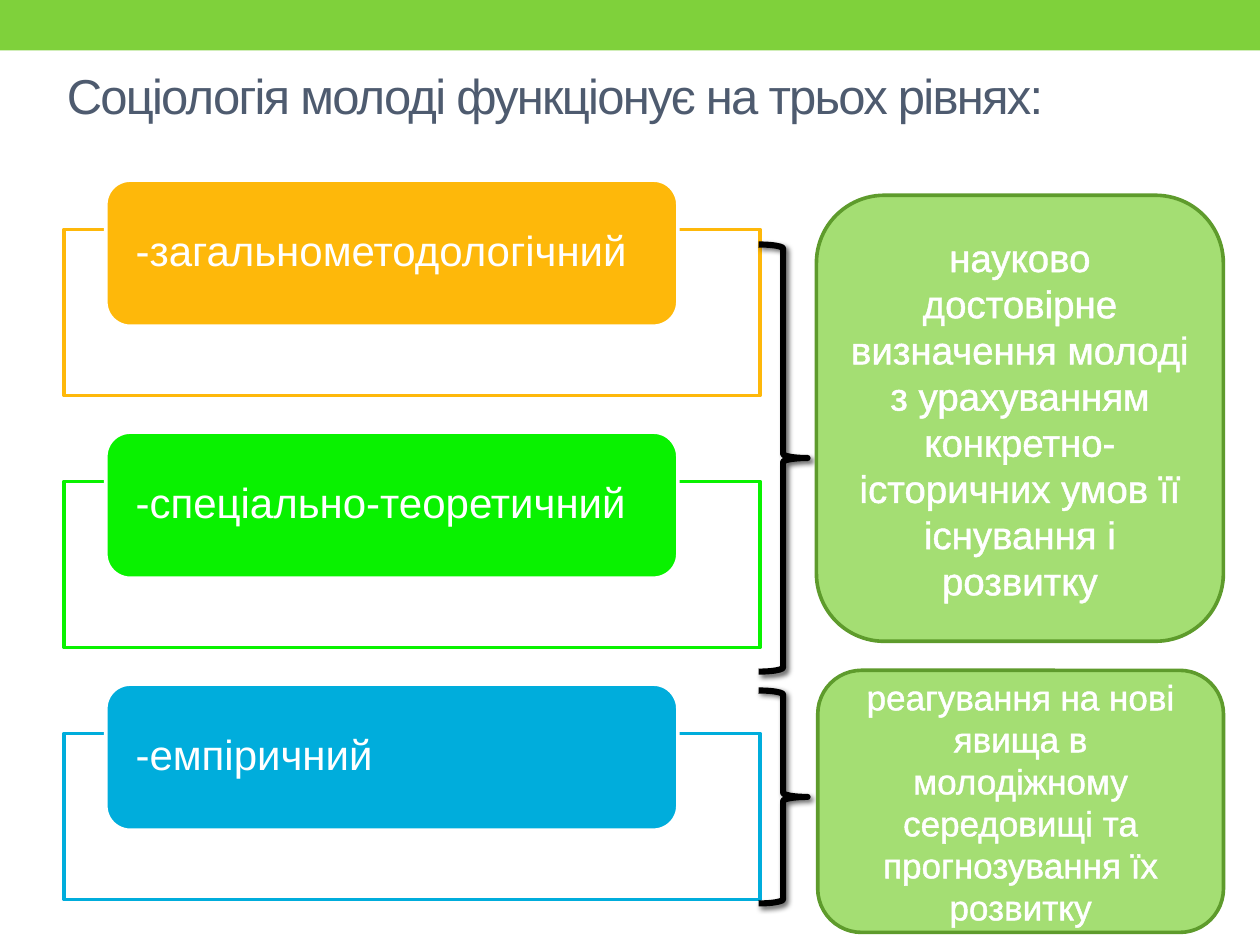
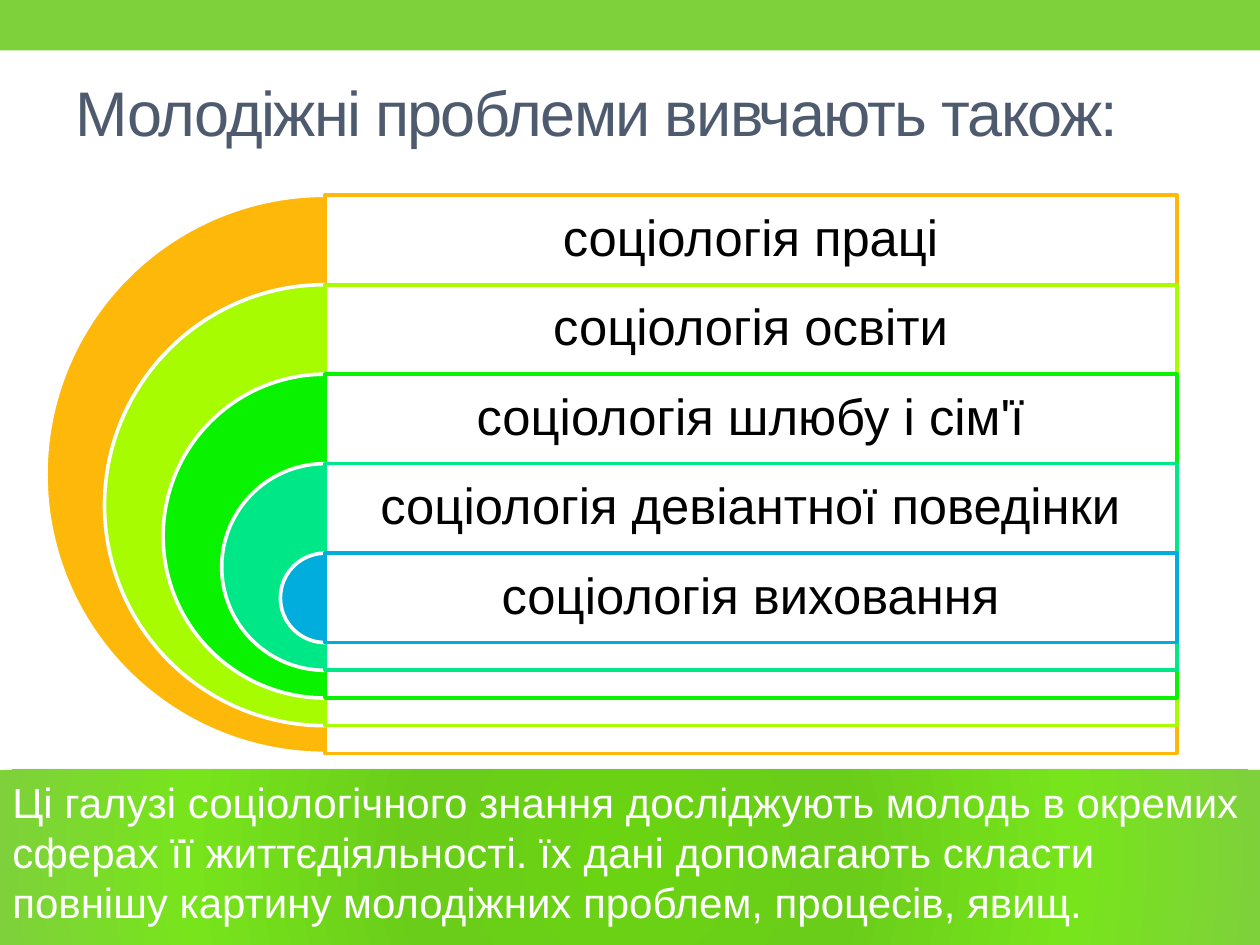
from dataclasses import dataclass

from lxml import etree
from pptx import Presentation
from pptx.dml.color import RGBColor
from pptx.enum.shapes import MSO_SHAPE as Preset
from pptx.enum.text import MSO_ANCHOR as Anchor, PP_ALIGN as Align
from pptx.oxml import parse_xml
from pptx.oxml.ns import nsdecls, qn
from pptx.util import Inches, Pt


@dataclass(frozen=True)
class Theme:
    font: str = "Arial"
    white: str = "FFFFFF"
    black: str = "000000"
    title: str = "4E5B6F"
    band: str = "7FD13B"
    callout_line: str = "5E9B2C"
    orange: str = "FEB80A"
    lime: str = "A7FC01"
    green: str = "09F200"
    mint: str = "00E788"
    blue: str = "00ADDC"
    footer_stops: tuple = ((0, "6AD312"), (34, "6ACD19"), (70, "77E41C"), (100, "7FD13B"))
    title_size: int = 36
    long_title_size: int = 28
    row_size: int = 29
    text_size: int = 24
    callout_size: int = 22
    small_callout_size: int = 20
    line: float = 2.08
    brace_line: float = 3.5


class Deck:
    def __init__(self, theme):
        self.theme = theme
        self.presentation = Presentation()
        self.presentation.slide_width = Inches(10)
        self.presentation.slide_height = Inches(7.5)
        self.slide = None

    def add_slide(self, title, box, size, anchor=Anchor.MIDDLE, top_inset=0.05):
        self.slide = self.presentation.slides.add_slide(self.presentation.slide_layouts[5])
        placeholder = self.slide.shapes.title
        placeholder.left, placeholder.top, placeholder.width, placeholder.height = map(Inches, box)
        paragraph = self.set_text(placeholder, title, size, self.theme.title, anchor=anchor)
        placeholder.text_frame.margin_top = Inches(top_inset)
        self.run_properties(paragraph).set("spc", "-100")

    def add_master_band(self):
        band = self.shape(Preset.RECTANGLE, (0, 0, 10, 0.4), self.theme.band)
        band.element.nvSpPr.cNvPr.set("id", "100")
        self.presentation.slide_master.shapes.element.insert(2, band.element)

    def shape(self, preset, box, fill=None, line=None, width=None, opacity=100):
        shape = self.slide.shapes.add_shape(preset, *map(Inches, box))
        shape.shadow.inherit = False
        if fill:
            shape.fill.solid()
            shape.fill.fore_color.rgb = RGBColor.from_string(fill)
            if opacity < 100:
                color = shape.element.spPr.find(qn("a:solidFill"))[0]
                etree.SubElement(color, qn("a:alpha"), val=str(opacity * 1000))
        else:
            shape.fill.background()
        if line:
            shape.line.color.rgb = RGBColor.from_string(line)
            shape.line.width = Pt(width or self.theme.line)
        else:
            shape.line.fill.background()
        return shape

    def set_text(self, shape, text, size, color, align=Align.LEFT, anchor=Anchor.MIDDLE, spacing=None):
        frame = shape.text_frame
        frame.word_wrap = True
        frame.vertical_anchor = anchor
        frame.text = text
        paragraph = frame.paragraphs[0]
        paragraph.alignment = align
        paragraph.line_spacing = spacing
        paragraph.font.name = self.theme.font
        paragraph.font.size = Pt(size)
        paragraph.font.color.rgb = RGBColor.from_string(color)
        return paragraph

    def run_properties(self, paragraph):
        return paragraph.runs[0].font._element

    def set_margins(self, shape, horizontal, vertical):
        frame = shape.text_frame
        frame.margin_left = frame.margin_right = Inches(horizontal)
        frame.margin_top = frame.margin_bottom = Inches(vertical)

    def cast_shadow(self, shape):
        effects = shape.element.spPr.find(qn("a:effectLst"))
        effects.append(parse_xml(
            f'<a:outerShdw {nsdecls("a")} blurRad="{Pt(3)}" dist="{Pt(2)}" dir="2700000" '
            f'algn="tl" rotWithShape="0"><a:srgbClr val="{self.theme.black}">'
            '<a:alpha val="60000"/></a:srgbClr></a:outerShdw>'))

    def framed_label(self, top, text, color):
        theme = self.theme
        self.shape(Preset.RECTANGLE, (0.51, top + 0.39, 5.52, 1.32), theme.white, color, opacity=90)
        label = self.shape(Preset.ROUNDED_RECTANGLE, (0.84, top, 4.54, 1.16), color, theme.white)
        self.set_text(label, text, theme.text_size, theme.white, spacing=0.9)
        self.set_margins(label, 0.18, 0)

    def brace(self, top, height):
        brace = self.shape(Preset.RIGHT_BRACE, (6.02, top, 0.39, height),
                           line=self.theme.black, width=self.theme.brace_line)
        self.cast_shadow(brace)

    def callout(self, box, text, size):
        theme = self.theme
        callout = self.shape(Preset.ROUNDED_RECTANGLE, box, theme.band, theme.callout_line, opacity=71)
        paragraph = self.set_text(callout, text, size, theme.white, Align.CENTER)
        self.run_properties(paragraph).insert(0, parse_xml(
            f'<a:ln {nsdecls("a")} w="{Pt(1.45)}"><a:solidFill>'
            f'<a:srgbClr val="{theme.white}"/></a:solidFill></a:ln>'))

    def ring_row(self, axis, top, diameter, row_height, text, color):
        theme = self.theme
        ring = self.shape(Preset.PIE, (axis - diameter / 2, top, diameter, diameter), color, theme.white)
        ring.adjustments[0], ring.adjustments[1] = 54, 162
        self.shape(Preset.RECTANGLE, (axis, top, 6.76, diameter), theme.white, color, opacity=90)
        label = self.slide.shapes.add_textbox(*map(Inches, (axis, top, 6.76, row_height)))
        self.set_text(label, text, theme.row_size, theme.black, Align.CENTER, spacing=0.9)
        self.set_margins(label, 0.12, 0.12)

    def footer(self, box, text):
        theme = self.theme
        footer = self.shape(Preset.RECTANGLE, box)
        stops = "".join(f'<a:gs pos="{position * 1000}"><a:srgbClr val="{color}"/></a:gs>'
                        for position, color in theme.footer_stops)
        properties = footer.element.spPr
        properties.replace(properties.find(qn("a:noFill")), parse_xml(
            f'<a:gradFill {nsdecls("a")} rotWithShape="1"><a:gsLst>{stops}</a:gsLst>'
            '<a:path path="circle"><a:fillToRect l="100000" t="100000" r="100000" b="100000"/>'
            '</a:path></a:gradFill>'))
        self.cast_shadow(footer)
        paragraph = self.set_text(footer, text, theme.text_size, theme.white, anchor=Anchor.TOP)
        paragraph.space_before = Pt(4.8)


def build_levels(deck):
    theme = deck.theme
    deck.add_slide("Соціологія молоді функціонує на трьох рівнях:",
                   (0.43, 0.21, 9, 1.08), theme.long_title_size)
    deck.add_master_band()
    levels = (
        ("-загальнометодологічний", theme.orange),
        ("-спеціально-теоретичний", theme.green),
        ("-емпіричний", theme.blue),
    )
    for index, (text, color) in enumerate(levels):
        deck.framed_label(1.43 + 2 * index, text, color)
    deck.brace(1.94, 3.39)
    deck.brace(5.48, 1.69)
    deck.callout((6.48, 1.55, 3.23, 3.54),
                 "науково достовірне визначення молоді з урахуванням "
                 "конкретно-історичних умов її існування і розвитку", theme.callout_size)
    deck.callout((6.49, 5.32, 3.22, 2.08),
                 "реагування на нові явища в молодіжному середовищі "
                 "та прогнозування їх розвитку", theme.small_callout_size)


def build_fields(deck):
    theme = deck.theme
    deck.add_slide("Молодіжні проблеми вивчають також:", (0.5, 0.58, 9, 1.08),
                   theme.title_size, Anchor.TOP, top_inset=0)
    deck.footer((0, 6.11, 10, 1.39),
                "Ці галузі соціологічного знання досліджують молодь в окремих сферах її "
                "життєдіяльності. їх дані допомагають скласти повнішу картину молодіжних "
                "проблем, процесів, явищ.")
    fields = (
        ("соціологія праці", theme.orange),
        ("соціологія освіти", theme.lime),
        ("соціологія шлюбу і сім'ї", theme.green),
        ("соціологія девіантної поведінки", theme.mint),
        ("соціологія виховання", theme.blue),
    )
    row_height = 0.71
    for index, (text, color) in enumerate(fields):
        diameter = row_height + 0.93 * (len(fields) - 1 - index)
        deck.ring_row(2.58, 1.55 + row_height * index, diameter, row_height, text, color)


def main():
    deck = Deck(Theme())
    build_levels(deck)
    build_fields(deck)
    deck.presentation.save("out.pptx")


if __name__ == "__main__":
    main()
